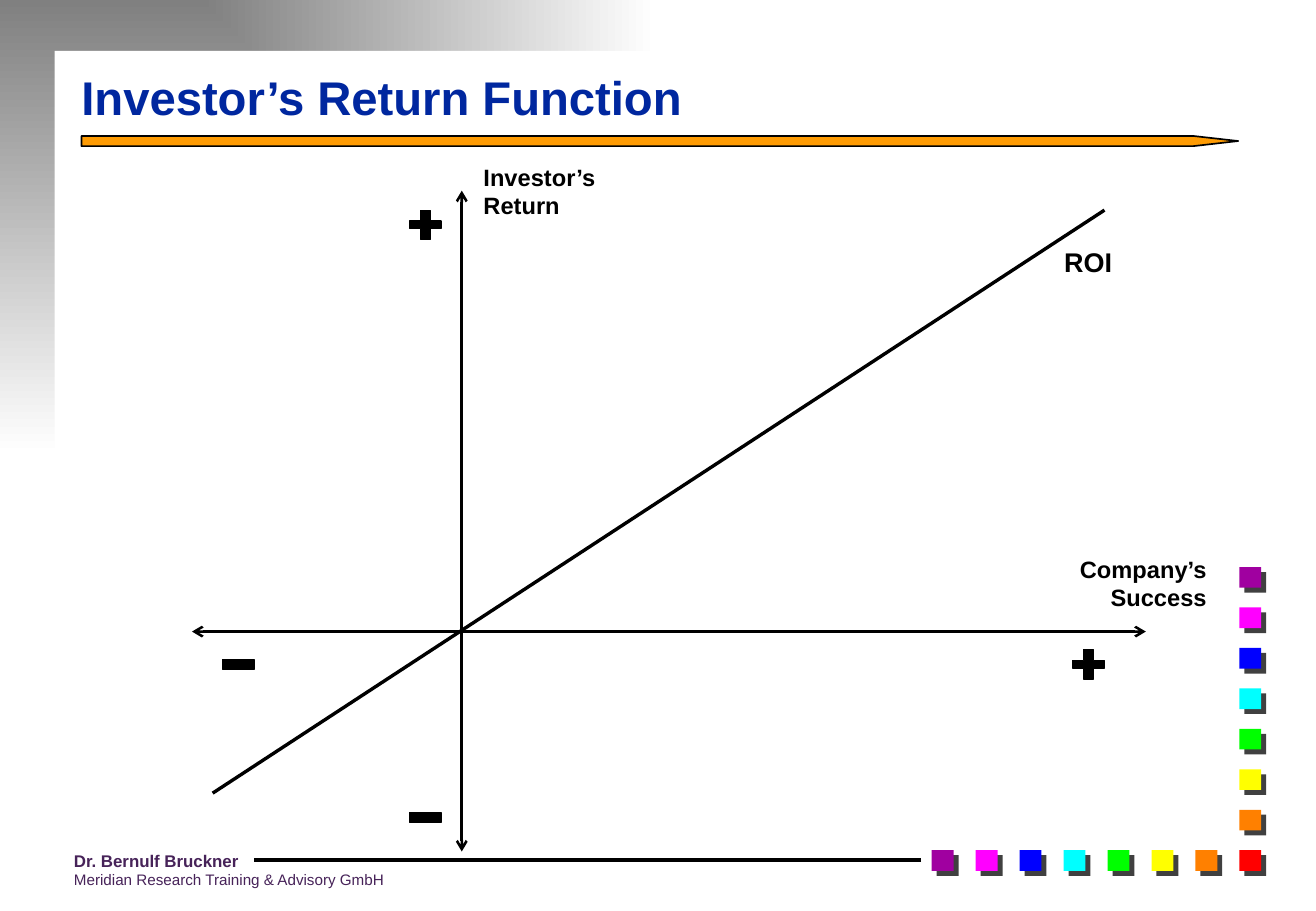
from lxml import etree
from pptx import Presentation
from pptx.dml.color import RGBColor
from pptx.enum.shapes import MSO_CONNECTOR, MSO_SHAPE
from pptx.enum.text import MSO_ANCHOR, MSO_AUTO_SIZE, PP_ALIGN
from pptx.oxml.ns import qn
from pptx.util import Inches, Pt

RECT, PLUS, ARROW_BAR = MSO_SHAPE.RECTANGLE, MSO_SHAPE.CROSS, MSO_SHAPE.PENTAGON
STRAIGHT = MSO_CONNECTOR.STRAIGHT
LEFT, RIGHT = PP_ALIGN.LEFT, PP_ALIGN.RIGHT
BOTTOM = MSO_ANCHOR.BOTTOM
GROW, FIXED = MSO_AUTO_SIZE.SHAPE_TO_FIT_TEXT, MSO_AUTO_SIZE.NONE

FONT = "Arial"
BLACK, WHITE, GREY = "000000", "FFFFFF", "808080"
NAVY, PLUM, ORANGE, SHADOW = "00279F", "472359", "FE9B03", "404040"

# All places are percentages of the slide: x and width of its width, y and height of its height.
TITLE = "Investor’s Return Function"
TITLE_BOX = (5.26, 5.87, 84.03, 8.53)
FRAME = (0, 0, 99.9, 99.9)
PANEL = (4.16, 5.6, 95.74, 94.3)
TITLE_BAR = (6.19, 14.93, 87.9, 1.11)

SQUARE_COLORS = ["FF0000", "FF8000", "FFFF00", "00FF00",
                 "00FFFF", "0000FF", "FF00FF", "A000A0"]
CORNER_SQUARE = (94.18, 93.33, 1.66, 2.27)
SQUARE_PITCH = (3.34, 4.44)

ORIGIN = (35.09, 69.33)
# start, end, width in points, arrows at both ends
LINES = [
    ((69.99, 94.4), (19.3, 94.4), 2, False),
    ((ORIGIN[0], 20.93), (ORIGIN[0], 93.47), 1.5, True),
    ((14.59, ORIGIN[1]), (87.07, ORIGIN[1]), 1.5, True),
    ((16.16, 87.07), (83.93, 23.07), 2, False),
]

PLUS_SIZE, MINUS_SIZE = (2.4, 3.2), (2.4, 1.07)
PLUS_SIGNS = [(31.12, 23.07), (81.53, 71.33)]
MINUS_SIGNS = [(16.9, 72.4), (31.12, 89.2)]

# box, lines, size, alignment
LABELS = [
    ((35.83, 17.2, 10.43, 7.6), ["Investor’s", "Return"], 14, LEFT),
    ((81.07, 60.27, 11.54, 7.6), ["Company’s", "Success"], 14, RIGHT),
    ((79.96, 26.27, 5.54, 4.93), ["ROI"], 16, LEFT),
]
FOOTER_BOX = (4.71, 92.67, 29.92, 5.6)
FOOTER = [("Dr. Bernulf Bruckner", 10, True),
          ("Meridian Research Training & Advisory GmbH", 9, False)]

prs = Presentation()
prs.slide_width, prs.slide_height = Inches(10.83), Inches(7.5)
s = prs.slides.add_slide(prs.slide_layouts[5])


def rgb(color):
    return RGBColor.from_string(color)


def emu(*shares):
    """Turn alternating x and y percentages into slide lengths."""
    sides = (prs.slide_width, prs.slide_height)
    return [round(share * sides[i % 2] / 100) for i, share in enumerate(shares)]


def add_shape(kind, box, fill, line_width=0):
    sp = s.shapes.add_shape(kind, *emu(*box))
    sp.shadow.inherit = False
    sp.fill.solid()
    sp.fill.fore_color.rgb = rgb(fill)
    if line_width:
        sp.line.color.rgb = rgb(BLACK)
        sp.line.width = Pt(line_width)
    else:
        sp.line.fill.background()
    return sp


def add_corner_gradient(sp, start, end):
    """Fade from the top left corner outwards."""
    sp.fill.gradient()
    for stop, color in zip(sp.fill.gradient_stops, (start, end)):
        stop.color.rgb = rgb(color)
    grad = sp.element.spPr.find(qn("a:gradFill"))
    grad.remove(grad.find(qn("a:lin")))
    fade = etree.SubElement(grad, qn("a:path"), {"path": "rect"})
    etree.SubElement(fade, qn("a:fillToRect"), r="100000", b="100000")


def add_square(box, color):
    sp = add_shape(RECT, box, color)
    effects = sp.element.spPr.find(qn("a:effectLst"))
    shadow = etree.SubElement(effects, qn("a:outerShdw"), dist=str(Pt(4.2)),
                              dir="2700000", algn="ctr", rotWithShape="0")
    etree.SubElement(shadow, qn("a:srgbClr"), val=SHADOW)


def add_line(start, end, width, arrows):
    c = s.shapes.add_connector(STRAIGHT, *emu(*start, *end))
    c.line.color.rgb = rgb(BLACK)
    c.line.width = Pt(width)
    spPr = c.element.spPr
    if arrows:
        for tag in ("a:headEnd", "a:tailEnd"):
            etree.SubElement(spPr.find(qn("a:ln")), qn(tag), type="arrow")
    etree.SubElement(spPr, qn("a:effectLst"))


def add_run(p, text, size, color, bold=True):
    r = p.add_run()
    r.text = text
    r.font.name, r.font.size, r.font.bold = FONT, Pt(size), bold
    r.font.color.rgb = rgb(color)


def add_text_box(box, wrap):
    tf = s.shapes.add_textbox(*emu(*box)).text_frame
    tf.word_wrap = wrap
    tf.auto_size = GROW
    return tf


# Frame and title
add_corner_gradient(add_shape(RECT, FRAME, GREY), GREY, WHITE)
add_shape(RECT, PANEL, WHITE)
bar = add_shape(ARROW_BAR, TITLE_BAR, ORANGE, 1)
bar.adjustments[0] = 4.42

title = s.shapes.title
title.left, title.top, title.width, title.height = emu(*TITLE_BOX)
tf = title.text_frame
tf.vertical_anchor, tf.auto_size, tf.word_wrap = BOTTOM, FIXED, True
tf.paragraphs[0].alignment = LEFT
add_run(tf.paragraphs[0], TITLE, 28, NAVY)
title.element.getparent().append(title.element)  # in front of the panel

# Row and column of squares that meet in the corner
x, y, w, h = CORNER_SQUARE
for i, color in enumerate(SQUARE_COLORS):
    add_square((x - i * SQUARE_PITCH[0], y, w, h), color)
    if i:
        add_square((x, y - i * SQUARE_PITCH[1], w, h), color)

# Footer
tf = add_text_box(FOOTER_BOX, True)
for i, (text, size, bold) in enumerate(FOOTER):
    p = tf.add_paragraph() if i else tf.paragraphs[0]
    add_run(p, text, size, PLUM, bold)

# Diagram
for line in LINES:
    add_line(*line)
for place in PLUS_SIGNS:
    add_shape(PLUS, place + PLUS_SIZE, BLACK, 0.75).adjustments[0] = 0.375
for place in MINUS_SIGNS:
    add_shape(RECT, place + MINUS_SIZE, BLACK, 0.75)
for box, lines, size, align in LABELS:
    p = add_text_box(box, False).paragraphs[0]
    p.alignment = align
    for i, text in enumerate(lines):
        if i:
            p.add_line_break()
        add_run(p, text, size, BLACK)

prs.save("out.pptx")
